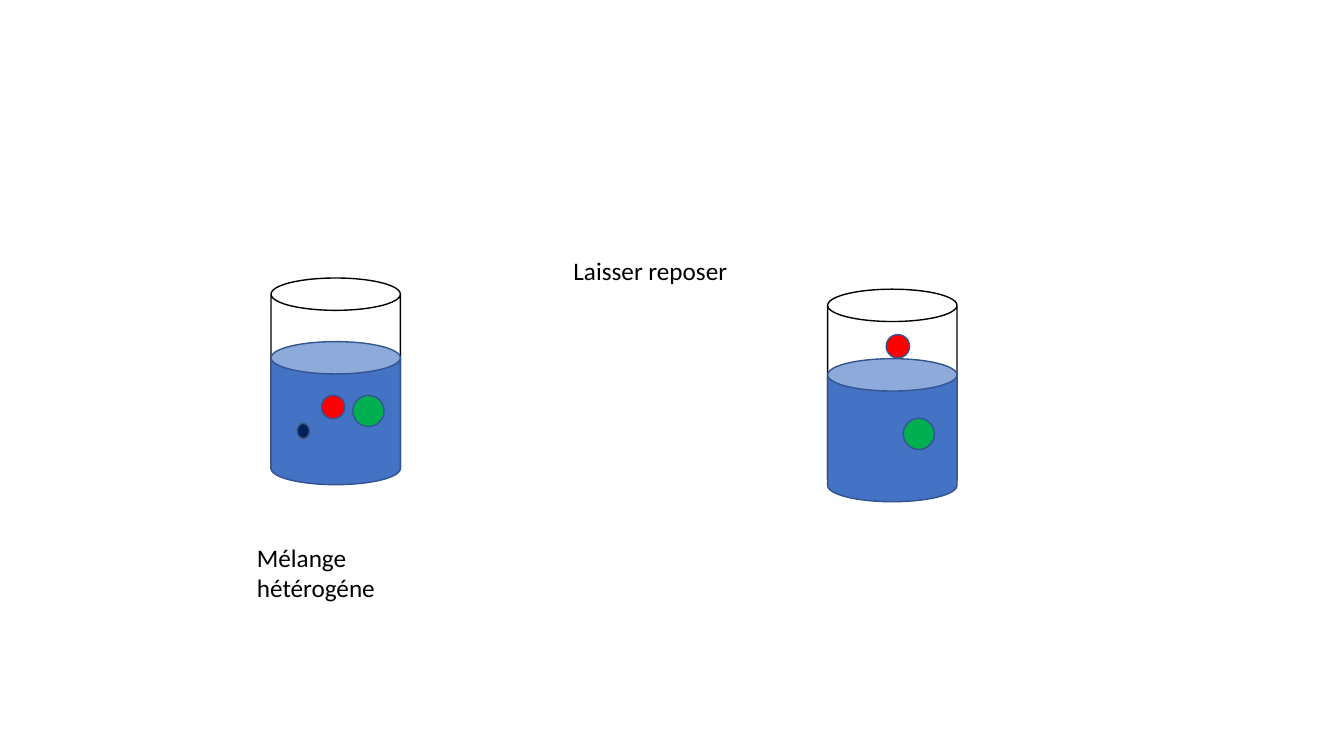
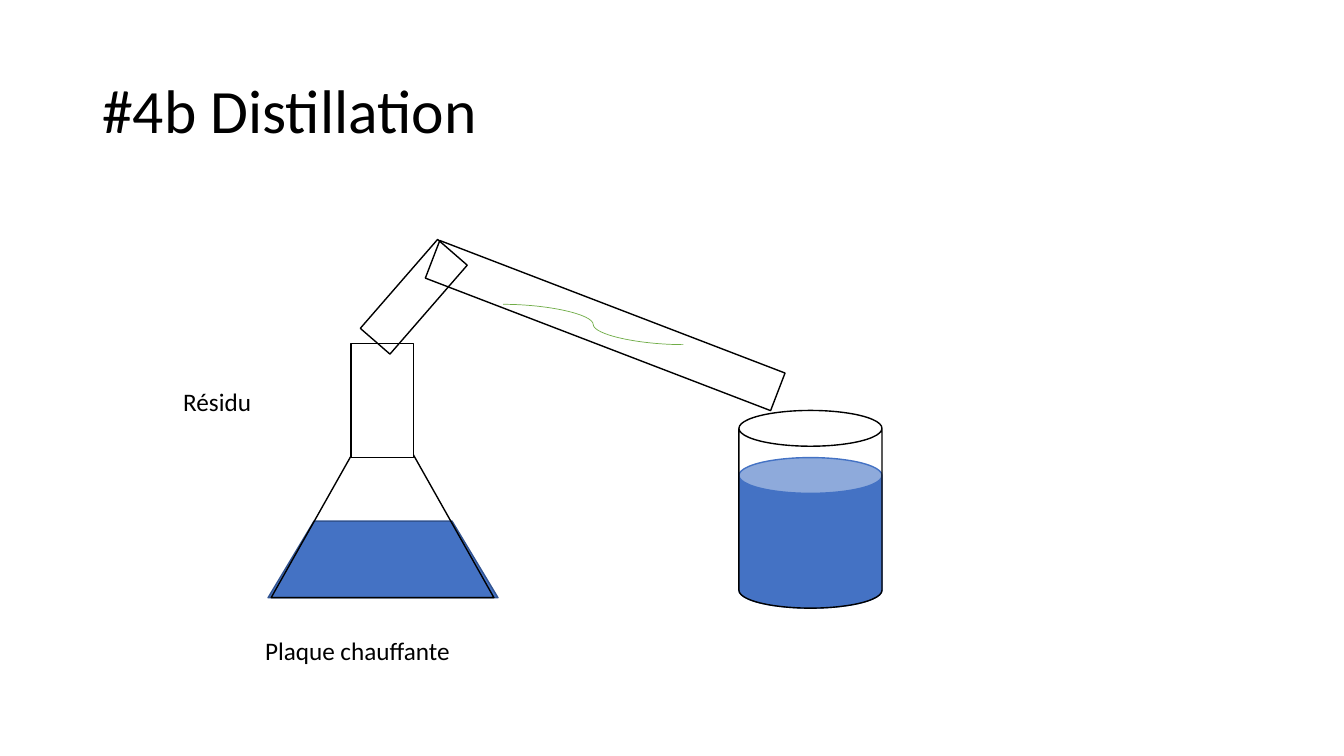
"""Build two slides on separating mixtures: settling and distillation."""
from dataclasses import dataclass

import lxml.etree
import pptx
import pptx.dml.color
import pptx.enum.shapes
import pptx.enum.text
import pptx.oxml.ns
import pptx.util

Pt = pptx.util.Pt
SHAPE = pptx.enum.shapes.MSO_SHAPE


@dataclass(frozen=True)
class Theme:
    """Colours, font and sizes shared by the slides."""

    black: str = "000000"
    white: str = "FFFFFF"
    liquid: str = "4472C4"
    edge: str = "325491"
    red: str = "FF0000"
    green: str = "00B050"
    navy: str = "002060"
    slate: str = "44546A"
    vapour: str = "70AD47"
    font: str = "Calibri"
    title_size: int = 44
    label_size: int = 18
    line_width: float = 1
    thin_width: float = 0.5


THEME = Theme()


def rgb(value):
    """Return the colour for a hexadecimal string."""
    return pptx.dml.color.RGBColor.from_string(value)


def add_slide(presentation):
    """Add a slide on the blank layout."""
    return presentation.slides.add_slide(presentation.slide_layouts[6])


def add_figure(slide, kind, box, fill=None, line=THEME.black, rotation=0):
    """Add an outlined preset shape, hollow unless a fill is given."""
    shape = slide.shapes.add_shape(kind, *map(Pt, box))
    shape.shadow.inherit = False
    shape.rotation = rotation
    if fill:
        shape.fill.solid()
        shape.fill.fore_color.rgb = rgb(fill)
    else:
        shape.fill.background()
    shape.line.color.rgb = rgb(line)
    shape.line.width = Pt(THEME.line_width)


def add_ball(slide, left, top, width, height, fill, line=THEME.edge):
    """Add one particle of the mixture."""
    add_figure(slide, SHAPE.OVAL, (left, top, width, height), fill, line)


def add_red_ball(slide, left, top):
    """Add the light particle."""
    add_ball(slide, left, top, 16.7, 16.7, THEME.red)


def add_green_ball(slide, left, top):
    """Add the heavy particle."""
    add_ball(slide, left, top, 22.3, 22.3, THEME.green)


def add_settling_beaker(slide, left, glass_top, liquid_top):
    """Add a beaker with its liquid in front of the glass."""
    add_figure(slide, SHAPE.CAN, (left, glass_top, 92.4, 147))
    add_figure(slide, SHAPE.CAN, (left, liquid_top, 92.4, 102.2), THEME.liquid, THEME.edge)


def add_text(slide, text, box, size=THEME.label_size):
    """Add a wrapped text box and return it."""
    shape = slide.shapes.add_textbox(*map(Pt, box))
    shape.text_frame.word_wrap = True
    run = shape.text_frame.paragraphs[0].add_run()
    run.text = text
    run.font.name = THEME.font
    run.font.size = Pt(size)
    run.font.color.rgb = rgb(THEME.black)
    return shape


def add_label(slide, text, left, top, width, height=29):
    """Add a label that grows with its text."""
    shape = add_text(slide, text, (left, top, width, height))
    shape.text_frame.auto_size = pptx.enum.text.MSO_AUTO_SIZE.SHAPE_TO_FIT_TEXT


def add_title(slide, text):
    """Add the slide title, centred vertically in its band."""
    shape = add_text(slide, text, (66, 28.8, 828, 104.4), THEME.title_size)
    shape.text_frame.vertical_anchor = pptx.enum.text.MSO_ANCHOR.MIDDLE
    shape.text_frame.paragraphs[0].line_spacing = 0.9


def add_curve(slide, start, end, colour):
    """Add a thin curved connector without a shadow."""
    connector = slide.shapes.add_connector(
        pptx.enum.shapes.MSO_CONNECTOR.CURVE, *map(Pt, start + end)
    )
    connector.line.color.rgb = rgb(colour)
    connector.line.width = Pt(THEME.thin_width)
    lxml.etree.SubElement(connector._element.spPr, pptx.oxml.ns.qn("a:effectLst"))


def build_settling(presentation):
    """Build the slide with the mixture before and after settling."""
    slide = add_slide(presentation)
    add_settling_beaker(slide, 193.6, 198.6, 244)
    add_green_ball(slide, 252, 282.4)
    add_red_ball(slide, 229.6, 282.4)
    add_ball(slide, 212.3, 302.4, 8.8, 10.8, THEME.navy, THEME.slate)
    add_label(slide, "Mélange hétérogéne", 176.4, 383.8, 152.6, 51)
    add_label(slide, "Laisser reposer", 402.5, 178.6, 152.6)
    add_settling_beaker(slide, 591.2, 206.6, 256.2)
    add_red_ball(slide, 633, 239)
    add_green_ball(slide, 645.2, 298.8)


def build_distillation(presentation):
    """Build the slide with the distillation apparatus."""
    slide = add_slide(presentation)
    add_title(slide, "#4b Distillation")
    add_figure(slide, SHAPE.FLOWCHART_MANUAL_OPERATION, (191.5, 372.2, 164.2, 54.7),
               THEME.liquid, THEME.edge, 180)
    add_figure(slide, SHAPE.ISOSCELES_TRIANGLE, (193.7, 285.8, 159.1, 141.1))
    add_figure(slide, SHAPE.RECTANGLE, (250.6, 245.5, 44.6, 81.4), THEME.white)
    add_label(slide, "Plaque chauffante", 182.2, 450, 207.4)
    add_label(slide, "Résidu", 123.8, 272.2, 105.8)
    add_figure(slide, SHAPE.RECTANGLE, (281.5, 169.9, 28.1, 84.2), rotation=41)
    add_figure(slide, SHAPE.RECTANGLE, (300.2, 218.2, 264.2, 28.8), rotation=21)
    add_figure(slide, SHAPE.CAN, (527.8, 326.9, 102.2, 107.5), THEME.liquid, THEME.liquid)
    add_figure(slide, SHAPE.CAN, (527.8, 293.2, 102.2, 141.2))
    add_curve(slide, (359.3, 217.4), (488.2, 246.2), THEME.vapour)


def main():
    """Create and save the presentation."""
    presentation = pptx.Presentation()
    presentation.slide_width = Pt(960)
    presentation.slide_height = Pt(540)
    build_settling(presentation)
    build_distillation(presentation)
    presentation.save("out.pptx")


if __name__ == "__main__":
    main()
